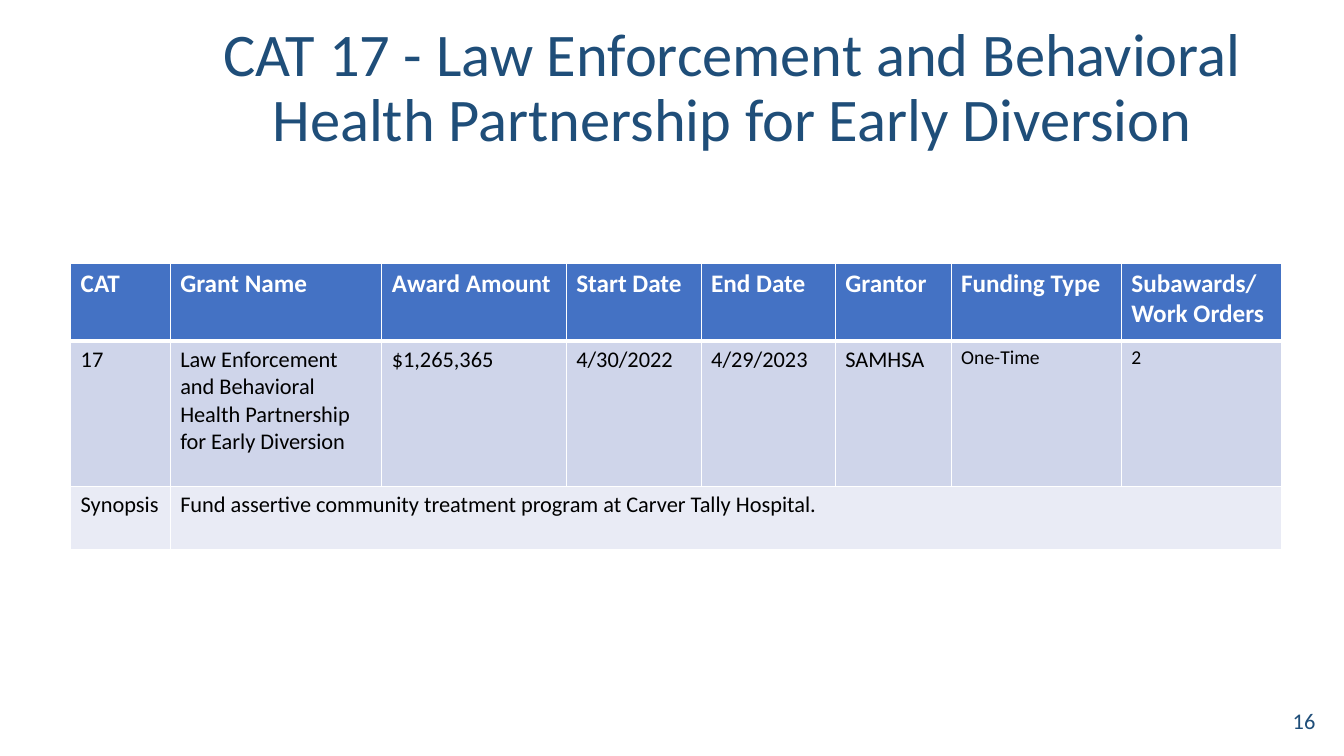
from lxml.etree import SubElement
from pptx import Presentation
from pptx.dml.color import RGBColor
from pptx.enum.text import MSO_ANCHOR, MSO_AUTO_SIZE, PP_ALIGN
from pptx.oxml.ns import qn
from pptx.util import Cm, Pt

HUES = {
    "navy": "1F4E79",
    "head": "4472C4",
    "band": "CFD5EA",
    "pale": "E9EBF5",
    "white": "FFFFFF",
    "black": "000000",
}

# Table content and sizes in cm
HEADS = ["CAT", "Grant Name", "Award Amount", "Start Date", "End Date",
         "Grantor", "Funding Type", "Subawards/Work Orders"]
GRANT = ["17", "Law Enforcement and Behavioral Health Partnership for Early Diversion",
         "$1,265,365", "4/30/2022", "4/29/2023", "SAMHSA", "One-Time ", "2"]
NOTE = ["Synopsis",
        "Fund assertive community treatment program at Carver Tally Hospital."]
WIDTHS = [2.51, 5.33, 4.65, 3.4, 3.38, 2.92, 4.29, 4.04]
HEIGHTS = [1.96, 3.66, 1.6]

# Row formats: text size, bold, text colour, fill, top and bottom line
STYLES = [
    (18, True, "white", "head", 1, 3),
    (16, False, "black", "band", 3, 1),
    (16, False, "black", "pale", 1, 1),
]


def color(name):
    return RGBColor.from_string(HUES[name])


def place(shape, box):
    for side, size in zip(("left", "top", "width", "height"), box):
        setattr(shape, side, Cm(size))


def write(frame, text, hue, size, bold=False, **form):
    frame.text = text
    para = frame.paragraphs[0]
    for key, value in form.items():
        setattr(para, key, value)
    font = para.runs[0].font
    for key, value in {"name": "Calibri", "size": Pt(size), "bold": bold}.items():
        setattr(font, key, value)
    font.color.rgb = color(hue)


def label(shape, box, text, size, **form):
    place(shape, box)
    frame = shape.text_frame
    write(frame, text, "navy", size, **form)
    frame.word_wrap = True
    frame.auto_size = MSO_AUTO_SIZE.NONE
    frame.vertical_anchor = MSO_ANCHOR.MIDDLE


def edge(cell, top, base):
    props = cell._tc.get_or_add_tcPr()
    sides = {"lnL": 1, "lnR": 1, "lnT": top, "lnB": base}
    for spot, (side, width) in enumerate(sides.items()):
        line = SubElement(props, qn(f"a:{side}"), w=str(Pt(width)))
        fill = SubElement(line, qn("a:solidFill"))
        SubElement(fill, qn("a:srgbClr"), val=HUES["white"])
        # Lines come before the cell fill
        props.insert(spot, line)


def grid(slide, left, top):
    rows = [HEADS, GRANT, NOTE]
    frame = slide.shapes.add_table(len(rows), len(WIDTHS), Cm(left), Cm(top),
                                   Cm(sum(WIDTHS)), Cm(sum(HEIGHTS)))
    table = frame.table
    for col, width in zip(table.columns, WIDTHS):
        col.width = Cm(width)
    for y, (texts, style) in enumerate(zip(rows, STYLES)):
        size, bold, ink, fill, above, below = style
        table.rows[y].height = Cm(HEIGHTS[y])
        for x in range(len(WIDTHS)):
            cell = table.cell(y, x)
            cell.fill.solid()
            cell.fill.fore_color.rgb = color(fill)
            edge(cell, above, below)
            if x < len(texts):
                # The last two grant values are smaller
                small = y == 1 and x > 5
                write(cell.text_frame, texts[x], ink, 14 if small else size, bold)
    table.cell(2, 1).merge(table.cell(2, len(WIDTHS) - 1))


def main():
    deck = Presentation()
    deck.slide_width, deck.slide_height = Cm(33.87), Cm(19.05)
    slide = deck.slides.add_slide(deck.slide_layouts[5])

    # Title
    label(slide.shapes.title, (4.88, 0.99, 27.15, 2.51),
          "CAT 17 - Law Enforcement and Behavioral Health Partnership for Early Diversion",
          43.2, alignment=PP_ALIGN.CENTER, line_spacing=0.9)

    # Page number
    page = (25.78, 17.65, 7.62, 1.02)
    label(slide.shapes.add_textbox(*map(Cm, page)), page, "16", 16,
          alignment=PP_ALIGN.RIGHT)

    # Grant table
    grid(slide, 1.78, 6.63)
    deck.save("out.pptx")


if __name__ == "__main__":
    main()
